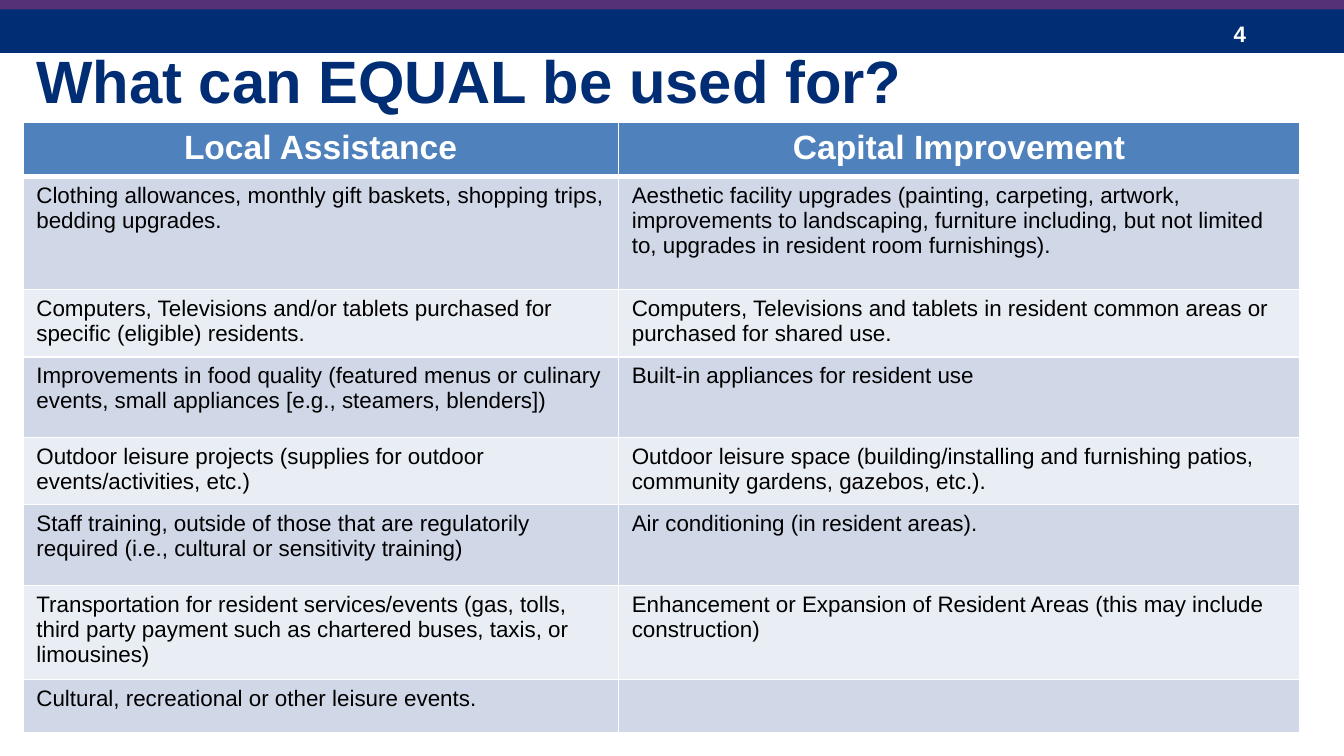
from lxml.etree import SubElement
from pptx import Presentation
from pptx.dml.color import RGBColor
from pptx.enum.shapes import MSO_SHAPE
from pptx.enum.text import MSO_ANCHOR, PP_ALIGN
from pptx.oxml.ns import qn
from pptx.util import Pt

NAVY, PURPLE, WHITE, BLACK = "002D73", "553278", "FFFFFF", "000000"
HEADER_FILL, BAND_FILLS = "4F81BD", ("D0D8E8", "E9EDF4")
TITLE = "What can EQUAL be used for?"
PAGE_NUMBER = "4"
BARS = [(4.8, 23.6, NAVY), (-1.4, 6.4, PURPLE)]
LEFT, WIDTH, TABLE_TOP = 12.3, 684, 65.7
COLUMN_WIDTHS = (319, 365)
ROWS = [
    (28, "Local Assistance", "Capital Improvement"),
    (60.6, "Clothing allowances, monthly gift baskets, shopping trips, bedding upgrades.",
     "Aesthetic facility upgrades (painting, carpeting, artwork, improvements to landscaping, "
     "furniture including, but not limited to, upgrades in resident room furnishings)."),
    (34.8, "Computers, Televisions and/or tablets purchased for specific (eligible) residents.",
     "Computers, Televisions and tablets in resident common areas or purchased for shared use."),
    (43.2, "Improvements in food quality (featured menus or culinary events, small appliances "
     "[e.g., steamers, blenders])", "Built-in appliances for resident use"),
    (34.8, "Outdoor leisure projects (supplies for outdoor events/activities, etc.)",
     "Outdoor leisure space (building/installing and furnishing patios, community gardens, "
     "gazebos, etc.)."),
    (43.2, "Staff training, outside of those that are regulatorily required (i.e., cultural or "
     "sensitivity training)", "Air conditioning (in resident areas)."),
    (48.6, "Transportation for resident services/events (gas, tolls, third party payment such as "
     "chartered buses, taxis, or limousines)",
     "Enhancement or Expansion of Resident Areas (this may include construction)"),
    (27.4, "Cultural, recreational or other leisure events.", ""),
]


def color(value):
    return RGBColor.from_string(value)


def write(frame, text, size, ink, bold=False, align=PP_ALIGN.LEFT):
    para = frame.paragraphs[0]
    para.alignment = align
    para.font.size = Pt(size)
    span = para.add_run()
    span.text = text
    span.font.name = "Arial"
    span.font.size = Pt(size)
    span.font.bold = bold
    span.font.color.rgb = color(ink)


def add_borders(cell, bottom_width):
    properties = cell._tc.get_or_add_tcPr()
    for side, width in (("L", 1), ("R", 1), ("T", 1), ("B", bottom_width)):
        line = SubElement(properties, qn(f"a:ln{side}"), w=str(Pt(width)))
        fill = SubElement(line, qn("a:solidFill"))
        SubElement(fill, qn("a:srgbClr"), val=WHITE)


def add_bars(page, width):
    for top, height, fill in BARS:
        bar = page.shapes.add_shape(MSO_SHAPE.RECTANGLE, 0, Pt(top), width, Pt(height))
        bar.shadow.inherit = False
        bar.fill.solid()
        bar.fill.fore_color.rgb = color(fill)
        bar.line.fill.background()


def add_page_number(page):
    box = page.shapes.add_textbox(Pt(653.8), Pt(7.2), Pt(54), Pt(21.6))
    box.text_frame.word_wrap = True
    box.text_frame.vertical_anchor = MSO_ANCHOR.MIDDLE
    write(box.text_frame, PAGE_NUMBER, 12, WHITE, bold=True)


def add_uses_table(page):
    height = sum(row[0] for row in ROWS)
    table = page.shapes.add_table(len(ROWS), len(COLUMN_WIDTHS), Pt(LEFT), Pt(TABLE_TOP),
                                  Pt(WIDTH), Pt(height)).table
    for column, width in zip(table.columns, COLUMN_WIDTHS):
        column.width = Pt(width)
    for index, (row_height, *texts) in enumerate(ROWS):
        table.rows[index].height = Pt(row_height)
        header = index == 0
        for cell, text in zip(table.rows[index].cells, texts):
            add_borders(cell, 3 if header else 1)
            cell.fill.solid()
            cell.fill.fore_color.rgb = color(HEADER_FILL if header else BAND_FILLS[(index - 1) % 2])
            if header:
                write(cell.text_frame, text, 18, WHITE, bold=True, align=PP_ALIGN.CENTER)
            else:
                write(cell.text_frame, text, 12, BLACK)


def add_title(page):
    title = page.shapes.title
    title.left, title.top, title.width, title.height = Pt(LEFT), Pt(19.4), Pt(WIDTH), Pt(46)
    title.text_frame.word_wrap = True
    title.text_frame.vertical_anchor = MSO_ANCHOR.MIDDLE
    write(title.text_frame, TITLE, 32, NAVY, bold=True)


def main():
    """Build the slide comparing the two permitted uses of funds."""
    deck = Presentation()
    deck.slide_width, deck.slide_height = Pt(720), Pt(405)
    page = deck.slides.add_slide(deck.slide_layouts[5])
    add_bars(page, deck.slide_width)
    add_page_number(page)
    add_uses_table(page)
    add_title(page)
    deck.save("out.pptx")


if __name__ == "__main__":
    main()
